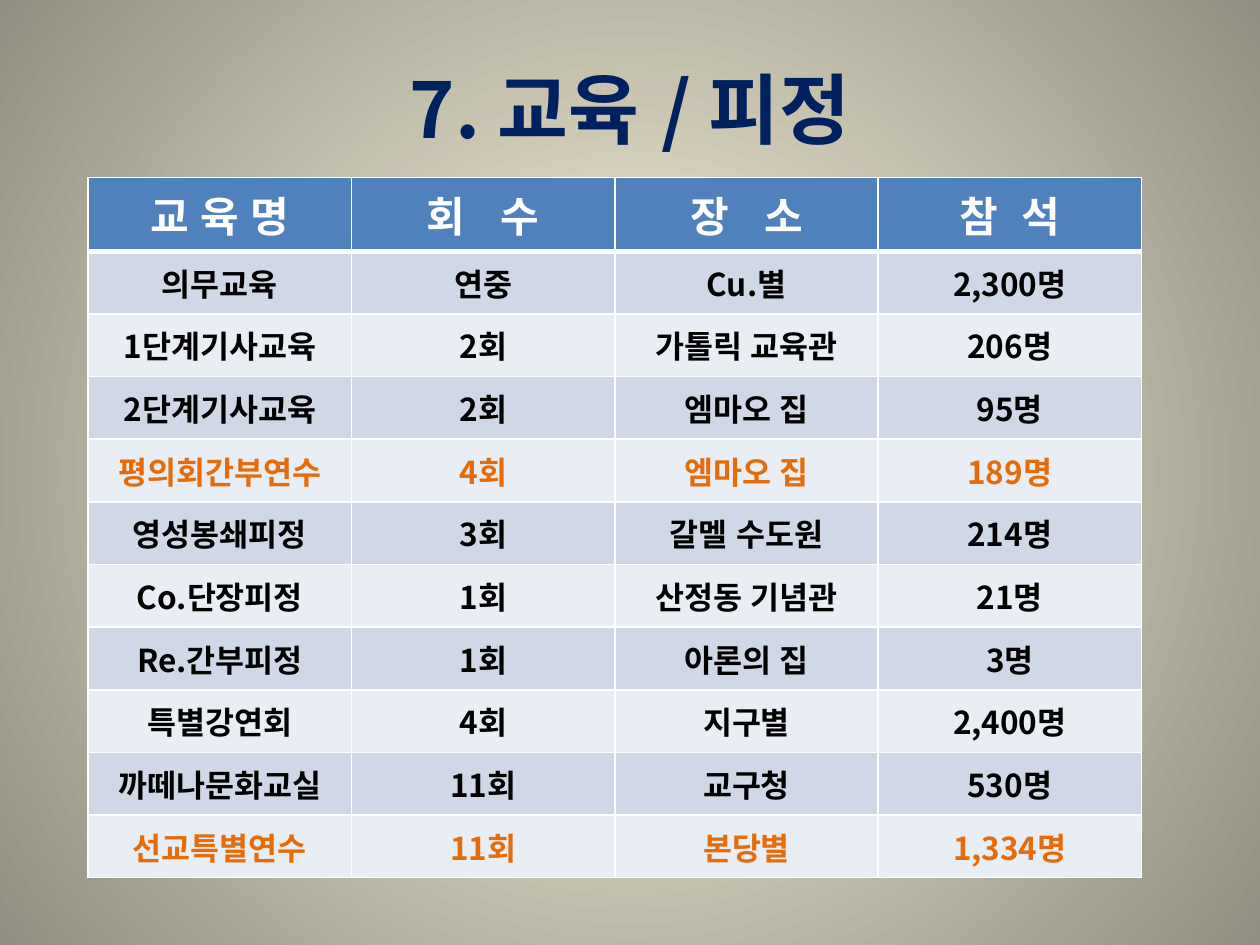
from lxml.etree import SubElement
from pptx import Presentation
from pptx.dml.color import RGBColor
from pptx.enum.lang import MSO_LANGUAGE_ID
from pptx.enum.text import MSO_ANCHOR, PP_ALIGN
from pptx.oxml.ns import qn
from pptx.util import Inches, Pt

TITLE = "7. 교육 / 피정"
HEADER = ("교 육 명", "회   수", "장   소", "참  석")
COURSES = [
    ("의무교육", "연중", "Cu.별", "2,300명"),
    ("1단계기사교육", "2회", "가톨릭 교육관", "206명"),
    ("2단계기사교육", "2회", "엠마오 집", "95명"),
    ("평의회간부연수", "4회", "엠마오 집", "189명"),
    ("영성봉쇄피정", "3회", "갈멜 수도원", "214명"),
    ("Co.단장피정", "1회", "산정동 기념관", "21명"),
    ("Re.간부피정", "1회", "아론의 집", "3명"),
    ("특별강연회", "4회", "지구별", "2,400명"),
    ("까떼나문화교실", "11회", "교구청", "530명"),
    ("선교특별연수", "11회", "본당별", "1,334명"),
]
HIGHLIGHTED = {"평의회간부연수", "선교특별연수"}
FONT = "Noto Sans CJK KR"
COLORS = {
    "center": "FCF7DD",
    "edge": "918E81",
    "title": "002060",
    "header": "4F81BD",
    "odd": "D0D8E8",
    "even": "E9EDF4",
    "white": "FFFFFF",
    "text": "000000",
    "highlight": "E46C0A",
}


def rgb(name):
    return RGBColor.from_string(COLORS[name])


def format_paragraph(paragraph, size, color):
    paragraph.alignment = PP_ALIGN.CENTER
    font = paragraph.font
    font.name = FONT
    font.size = Pt(size)
    font.bold = True
    font.color.rgb = rgb(color)
    font.language_id = MSO_LANGUAGE_ID.KOREAN
    properties = paragraph._p.find(".//" + qn("a:defRPr"))
    SubElement(properties, qn("a:ea"), typeface=FONT)


def add_borders(cell, bottom_width):
    properties = cell._tc.get_or_add_tcPr()
    widths = {"a:lnL": 1, "a:lnR": 1, "a:lnT": 1, "a:lnB": bottom_width}
    for position, (side, width) in enumerate(widths.items()):
        line = SubElement(properties, qn(side), w=str(Pt(width)))
        fill = SubElement(line, qn("a:solidFill"))
        SubElement(fill, qn("a:srgbClr"), val=COLORS["white"])
        properties.insert(position, line)


def paint_background(page):
    fill = page.background.fill
    fill.gradient()
    for stop, position, color in zip(fill.gradient_stops, (0, 1), ("center", "edge")):
        stop.position = position
        stop.color.rgb = rgb(color)
    gradient = page._element.find(".//" + qn("a:gradFill"))
    gradient.remove(gradient.find(qn("a:lin")))
    circle = SubElement(gradient, qn("a:path"), path="circle")
    SubElement(circle, qn("a:fillToRect"), l="50000", t="50000", r="50000", b="50000")


def add_title(page):
    title = page.shapes.title
    title.left, title.top = Inches(0.5), Inches(0.3)
    title.width, title.height = Inches(9), Inches(1.11)
    title.text_frame.text = TITLE
    title.text_frame.vertical_anchor = MSO_ANCHOR.MIDDLE
    format_paragraph(title.text_frame.paragraphs[0], 44, "title")


def add_course_table(page):
    rows = [HEADER] + COURSES
    table = page.shapes.add_table(
        len(rows), len(HEADER), Inches(0.7), Inches(1.41), Inches(8.36), Inches(5.47)
    ).table
    for row_index, row in enumerate(rows):
        if row_index == 0:
            fill, color, size, bottom = "header", "white", 24, 3
        else:
            fill = "odd" if row_index % 2 else "even"
            color = "highlight" if row[0] in HIGHLIGHTED else "text"
            size, bottom = 18, 1
        for column_index, value in enumerate(row):
            cell = table.cell(row_index, column_index)
            cell.text = value
            cell.vertical_anchor = MSO_ANCHOR.MIDDLE
            cell.fill.solid()
            cell.fill.fore_color.rgb = rgb(fill)
            add_borders(cell, bottom)
            format_paragraph(cell.text_frame.paragraphs[0], size, color)


def main():
    deck = Presentation()
    deck.slide_width, deck.slide_height = Inches(10), Inches(7.5)
    page = deck.slides.add_slide(deck.slide_layouts[5])
    paint_background(page)
    add_title(page)
    add_course_table(page)
    deck.save("out.pptx")


if __name__ == "__main__":
    main()
